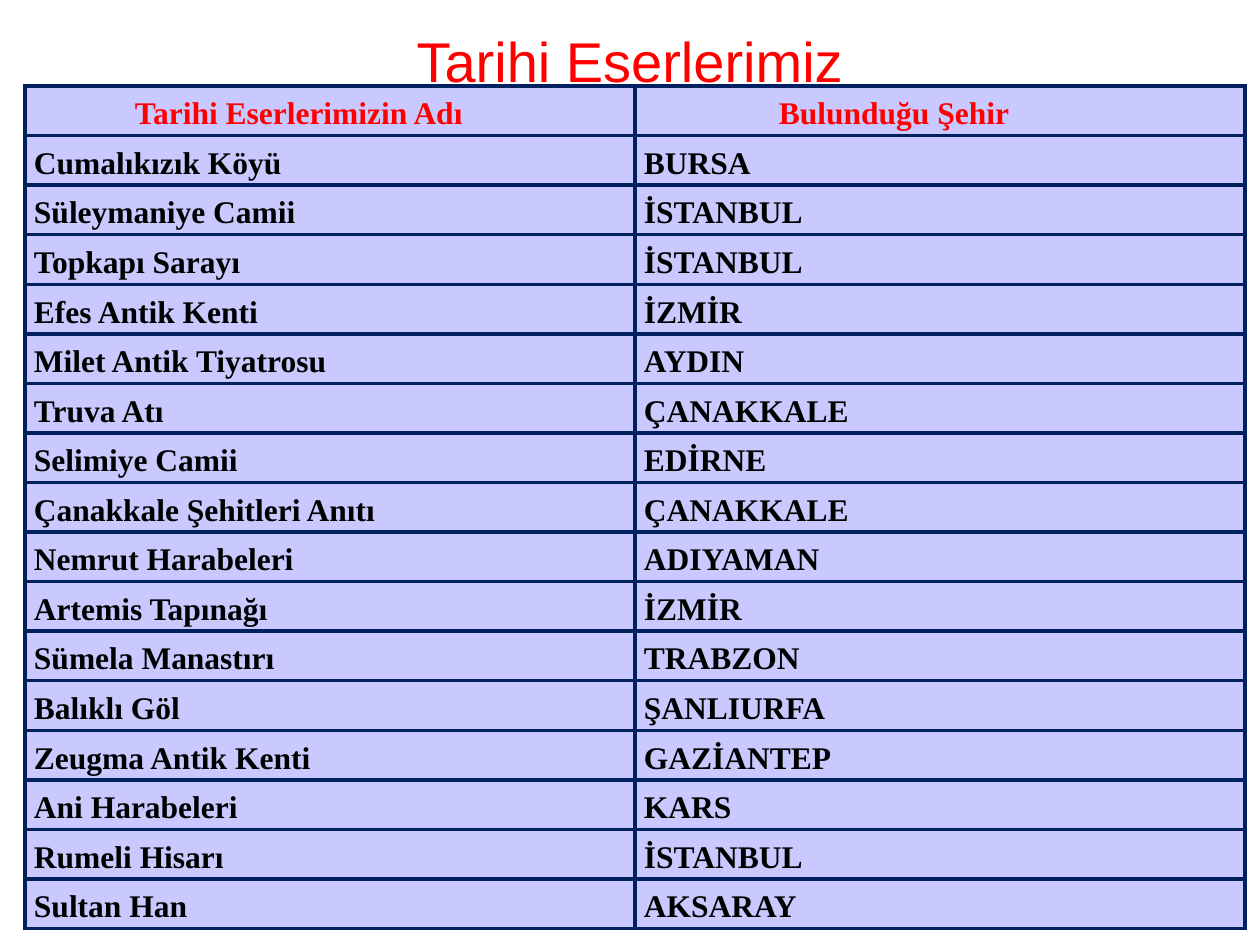
from lxml import etree
from pptx import Presentation
from pptx.dml.color import RGBColor
from pptx.enum import text
from pptx.oxml import ns
from pptx.util import Pt

PX = 914400 / 126  # EMU per pixel
COLORS = {"red": "FF0000", "black": "000000", "cell": "C9C9FF", "border": "002060"}
HEADINGS = ("Tarihi Eserlerimizin Adı", "Bulunduğu Şehir")
HEADING_INDENTS = (110, 144)
BODY_INDENT = 9
MONUMENTS = [
    ("Cumalıkızık Köyü", "BURSA"),
    ("Süleymaniye Camii", "İSTANBUL"),
    ("Topkapı Sarayı", "İSTANBUL"),
    ("Efes Antik Kenti", "İZMİR"),
    ("Milet Antik Tiyatrosu", "AYDIN"),
    ("Truva Atı", "ÇANAKKALE"),
    ("Selimiye Camii", "EDİRNE"),
    ("Çanakkale Şehitleri Anıtı", "ÇANAKKALE"),
    ("Nemrut Harabeleri", "ADIYAMAN"),
    ("Artemis Tapınağı", "İZMİR"),
    ("Sümela Manastırı", "TRABZON"),
    ("Balıklı Göl", "ŞANLIURFA"),
    ("Zeugma Antik Kenti", "GAZİANTEP"),
    ("Ani Harabeleri", "KARS"),
    ("Rumeli Hisarı", "İSTANBUL"),
    ("Sultan Han", "AKSARAY"),
]


def px(length):
    return round(length * PX)


def color(name):
    return RGBColor.from_string(COLORS[name])


def style_font(paragraph, name, size, color_name, bold):
    font = paragraph.font
    font.name, font.size, font.bold = name, Pt(size), bold
    font.color.rgb = color(color_name)


def add_borders(cell):
    properties = cell._tc.get_or_add_tcPr()
    for index, side in enumerate(("lnL", "lnR", "lnT", "lnB")):
        line = etree.Element(ns.qn(f"a:{side}"), w=str(Pt(2.25)))
        fill = etree.SubElement(line, ns.qn("a:solidFill"))
        etree.SubElement(fill, ns.qn("a:srgbClr"), val=COLORS["border"])
        properties.insert(index, line)  # borders come before the fill


def fill_cell(cell, content, indent, color_name):
    cell.margin_left, cell.margin_top = px(indent), px(23)
    cell.margin_right = cell.margin_bottom = 0
    cell.fill.solid()
    cell.fill.fore_color.rgb = color("cell")
    add_borders(cell)
    cell.text = content
    paragraph = cell.text_frame.paragraphs[0]
    paragraph.line_spacing = Pt(12.9)
    style_font(paragraph, "Times New Roman", 18, color_name, True)


def place_title(slide, left, top, width, height):
    title = slide.shapes.title
    title.left, title.top = px(left), px(top)
    title.width, title.height = px(width), px(height)
    frame = title.text_frame
    frame.text = "Tarihi Eserlerimiz"
    frame.vertical_anchor = text.MSO_ANCHOR.TOP
    frame.margin_top = px(9)
    paragraph = frame.paragraphs[0]
    paragraph.alignment = text.PP_ALIGN.CENTER
    style_font(paragraph, "Arial", 32, "red", False)


def add_monument_table(slide, left, top, width, height):
    rows = [HEADINGS] + MONUMENTS
    table = slide.shapes.add_table(
        len(rows), len(HEADINGS), px(left), px(top), px(width), px(height)
    ).table
    table.horz_banding = False
    for row_index, row in enumerate(rows):
        for column_index, content in enumerate(row):
            heading = row_index == 0
            indent = HEADING_INDENTS[column_index] if heading else BODY_INDENT
            fill_cell(table.cell(row_index, column_index), content, indent,
                      "red" if heading else "black")


def main():
    presentation = Presentation()
    presentation.slide_width, presentation.slide_height = px(1260), px(945)
    slide = presentation.slides.add_slide(presentation.slide_layouts[5])
    place_title(slide, 0, 18, 1260, 118)
    add_monument_table(slide, 25, 86, 1220, 843)
    presentation.save("out.pptx")


if __name__ == "__main__":
    main()
